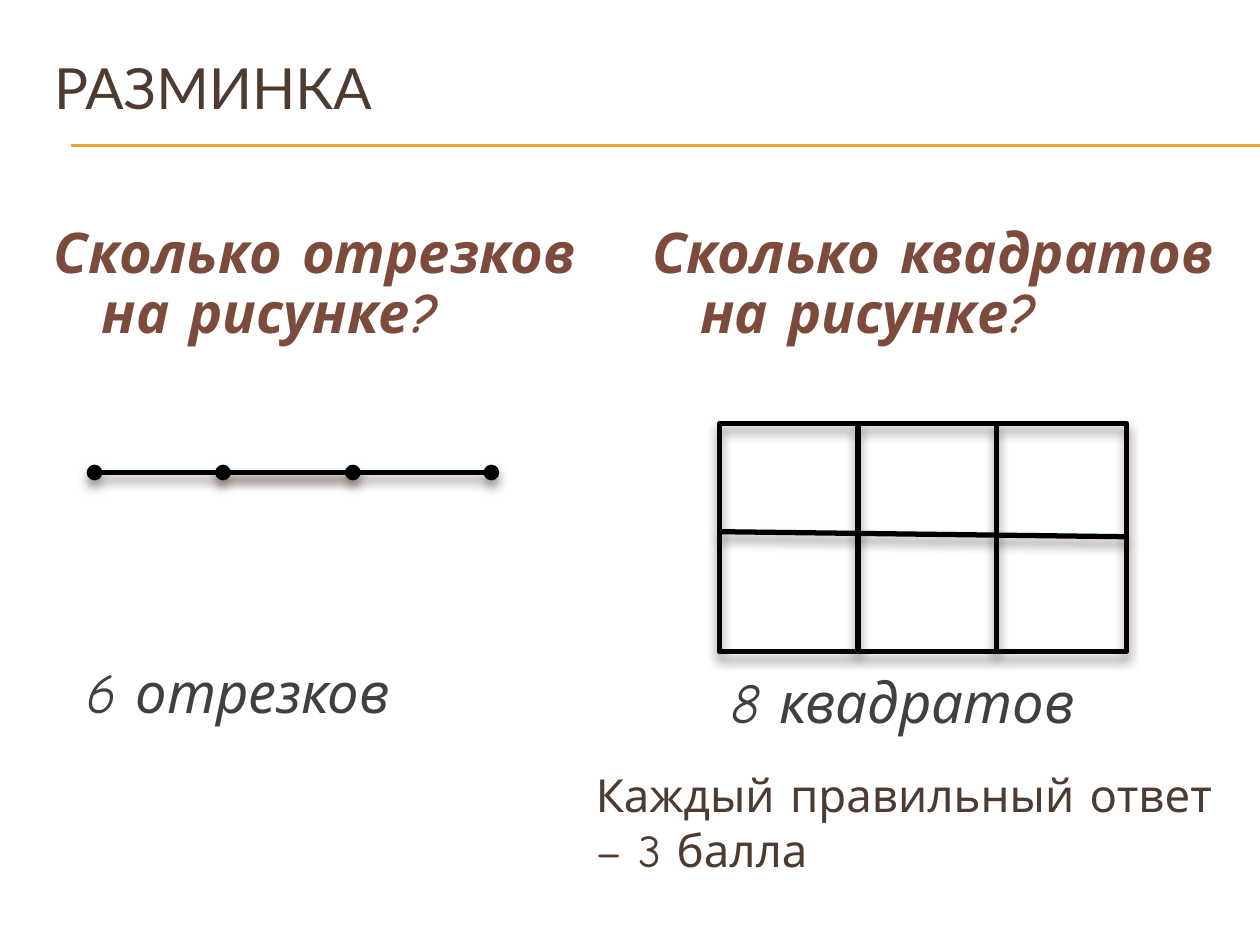
import pptx
import pptx.util
import pptx.dml.color
import pptx.enum.shapes
import pptx.enum.text
import pptx.oxml
import pptx.oxml.ns
import lxml.etree

Inches, Pt = pptx.util.Inches, pptx.util.Pt
BROWN, RUST, GRAY, BLACK, GOLD = "4E3B30", "7C4B3B", "404040", "000000", "F0A22E"

# Content
TITLE = "РАЗМИНКА"
# text, box, size, colour, bold, italic, left margin, indent, line spacing, space before, top inset
TEXTS = [
    ("Сколько отрезков на рисунке?", (0.33, 1.75, 4.58, 5.17), 32, RUST, True, True, 0.38, -0.38, 0.88, 3, 0.05),
    ("Сколько квадратов на рисунке?", (5.08, 1.75, 4.75, 5.17), 32, RUST, True, True, 0.38, -0.38, 0.88, 3, 0.05),
    ("Каждый правильный ответ – 3 балла", (3.98, 5.88, 6.02, 1.34), 26, BROWN, False, False, 0.65, 0, 1, 0, 0.21),
    ("6 отрезков", (0.59, 5.17, 3.15, 0.79), 32, GRAY, False, True, 0, 0, 1, 0, 0.05),
    ("8 квадратов", (5.71, 5.25, 3.15, 0.79), 32, GRAY, False, True, 0, 0, 1, 0, 0.05),
]
RULES = [1.15, 1.16]
SEGMENT_Y = 3.75
SEGMENTS = [(0.75, 3.9), (1.77, 2.8)]
GRID = (5.71, 3.36, 3.23, 1.81)
GRID_COLUMNS = [7.91, 6.81]
GRID_ROW = (4.22, 4.26)


def color(value):
    return pptx.dml.color.RGBColor.from_string(value)


def add_effects(shape, shadow):
    """Give the shape a soft shadow below it, or none at all."""
    properties = shape._element.spPr
    for old in properties.findall(pptx.oxml.ns.qn("a:effectLst")):
        properties.remove(old)
    effects = lxml.etree.SubElement(properties, pptx.oxml.ns.qn("a:effectLst"))
    if shadow:
        effects.append(pptx.oxml.parse_xml(
            f'<a:outerShdw {pptx.oxml.ns.nsdecls("a")} blurRad="{Pt(6)}" dist="{Pt(4)}" '
            f'dir="5400000" rotWithShape="0"><a:srgbClr val="{BROWN}">'
            '<a:alpha val="60000"/></a:srgbClr></a:outerShdw>'))


def add_line(slide, start, end, line_color=BLACK, width=3, dots=False, shadow=True):
    line = slide.shapes.add_connector(
        pptx.enum.shapes.MSO_CONNECTOR.STRAIGHT, *map(Inches, start + end))
    line.line.color.rgb = color(line_color)
    line.line.width = Pt(width)
    if dots:
        outline = line.line._get_or_add_ln()
        for name in ("a:headEnd", "a:tailEnd"):
            lxml.etree.SubElement(outline, pptx.oxml.ns.qn(name), type="oval")
    add_effects(line, shadow)


def add_text(slide, text, box, size, text_color, bold, italic, margin, indent, spacing, before, inset):
    frame = slide.shapes.add_textbox(*map(Inches, box)).text_frame
    frame.word_wrap = True
    frame.margin_top = Inches(inset)
    paragraph = frame.paragraphs[0]
    paragraph.text = text
    paragraph.line_spacing = spacing
    paragraph.space_before = Pt(before)
    font = paragraph.font
    font.name, font.size, font.bold, font.italic = "Comic Neue", Pt(size), bold, italic
    font.color.rgb = color(text_color)
    properties = paragraph._p.get_or_add_pPr()
    properties.set("marL", str(Inches(margin)))
    properties.set("indent", str(Inches(indent)))


def main():
    presentation = pptx.Presentation()
    presentation.slide_width, presentation.slide_height = Inches(10), Inches(7.5)
    slide = presentation.slides.add_slide(presentation.slide_layouts[5])

    # Title and the rules under it
    for y in RULES:
        add_line(slide, (0.56, y), (10, y), GOLD, 0.75, shadow=False)
    title = slide.shapes.title
    title.left, title.top, title.width, title.height = map(Inches, (0.33, 0.5, 9.5, 0.92))
    frame = title.text_frame
    frame.vertical_anchor = pptx.enum.text.MSO_ANCHOR.MIDDLE
    frame.margin_bottom = Inches(0.59)
    paragraph = frame.paragraphs[0]
    paragraph.text = TITLE
    paragraph.alignment = pptx.enum.text.PP_ALIGN.LEFT
    paragraph.font.name, paragraph.font.size = "Lato", Pt(32.4)
    paragraph.font.color.rgb = color(BROWN)

    # Questions, answers and score
    for text in TEXTS:
        add_text(slide, *text)

    # Segments with marked points
    for start, end in SEGMENTS:
        add_line(slide, (start, SEGMENT_Y), (end, SEGMENT_Y), dots=True)

    # Grid of squares
    left, top, width, height = GRID
    frame_shape = slide.shapes.add_shape(
        pptx.enum.shapes.MSO_SHAPE.RECTANGLE, *map(Inches, GRID))
    frame_shape.fill.background()
    frame_shape.line.color.rgb = color(BLACK)
    frame_shape.line.width = Pt(3)
    add_effects(frame_shape, True)
    add_line(slide, (left, GRID_ROW[0]), (left + width, GRID_ROW[1]))
    for x in GRID_COLUMNS:
        add_line(slide, (x, top + height), (x, top))

    presentation.save("out.pptx")


if __name__ == "__main__":
    main()
